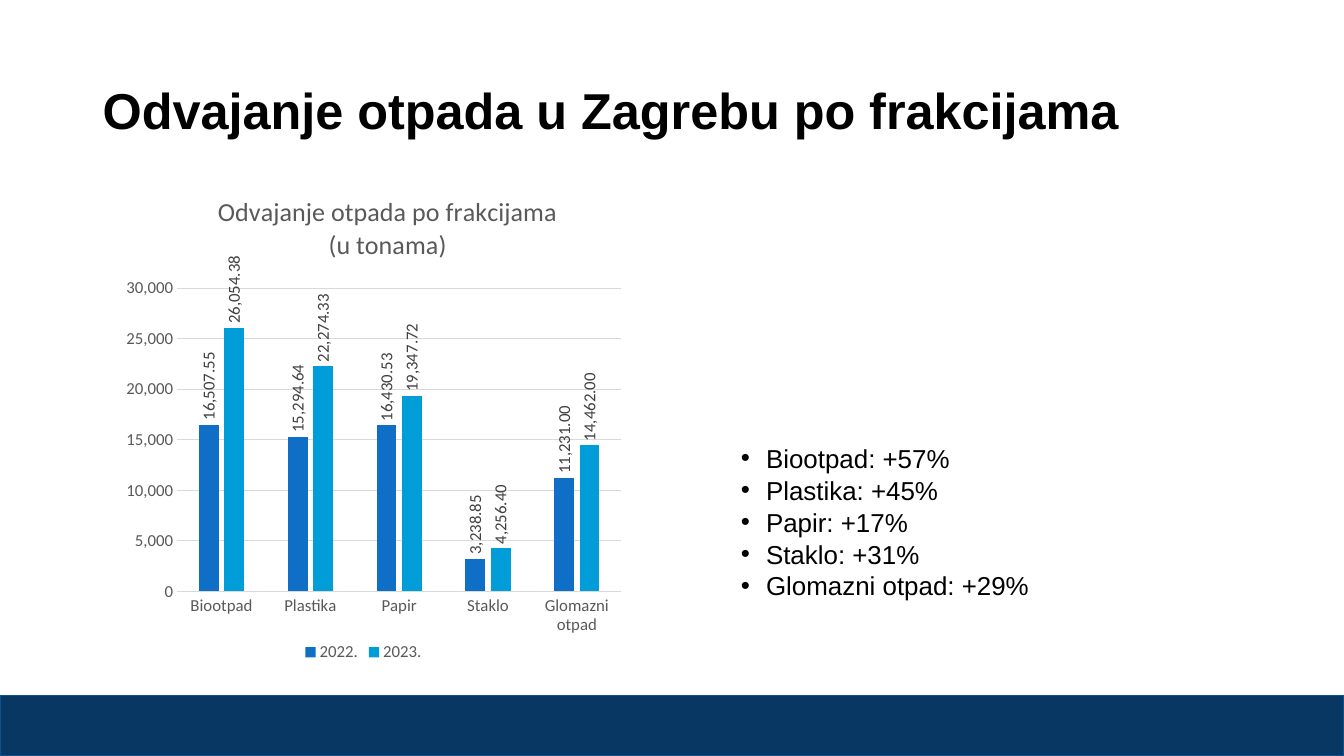
from lxml import etree
from pptx import Presentation
from pptx.chart.data import CategoryChartData
from pptx.dml.color import RGBColor
from pptx.enum.chart import XL_CHART_TYPE, XL_LABEL_POSITION, XL_LEGEND_POSITION, XL_TICK_MARK
from pptx.enum.shapes import MSO_SHAPE
from pptx.enum.text import MSO_ANCHOR
from pptx.oxml.ns import qn
from pptx.util import Pt

PX = 9144
COLUMN = XL_CHART_TYPE.COLUMN_CLUSTERED
OUTSIDE = XL_LABEL_POSITION.OUTSIDE_END
BOTTOM = XL_LEGEND_POSITION.BOTTOM
NO_TICK = XL_TICK_MARK.NONE
RECT = MSO_SHAPE.RECTANGLE
TOP, MIDDLE = MSO_ANCHOR.TOP, MSO_ANCHOR.MIDDLE

BLACK = RGBColor(0x00, 0x00, 0x00)
NAVY = RGBColor(0x08, 0x37, 0x63)
EDGE = RGBColor(0x0B, 0x52, 0x92)
GRAY = RGBColor(0x59, 0x59, 0x59)
DARK = RGBColor(0x40, 0x40, 0x40)
PALE = RGBColor(0xD9, 0xD9, 0xD9)
BLUE = RGBColor(0x0F, 0x6F, 0xC6)
CYAN = RGBColor(0x00, 0x9D, 0xD9)

TYPES = ["Biootpad", "Plastika", "Papir", "Staklo", "Glomazni otpad"]
GAINS = [57, 45, 17, 31, 29]
YEARS = [
    ("2022.", [16507.55, 15294.64, 16430.53, 3238.85, 11231], BLUE),
    ("2023.", [26054.38, 22274.33, 19347.72, 4256.4, 14462], CYAN),
]


def scale(*box):
    return [n * PX for n in box]


def style(font, name, size, color, bold=False):
    font.name = name
    font.size = Pt(size)
    font.bold = bold
    font.color.rgb = color


def add_bar(slide, box):
    bar = slide.shapes.add_shape(RECT, *scale(*box))
    bar.shadow.inherit = False
    bar.fill.solid()
    bar.fill.fore_color.rgb = NAVY
    bar.line.color.rgb = EDGE
    bar.line.width = Pt(1)


def add_text(slide, box, text, anchor, size, space, bold=False):
    frame = slide.shapes.add_textbox(*scale(*box)).text_frame
    frame.word_wrap = True
    frame.vertical_anchor = anchor
    frame.text = text
    for para in frame.paragraphs:
        para.line_spacing = space
        for run in para.runs:
            style(run.font, "Arial", size, BLACK, bold)
    return frame


def add_list(slide, box, items):
    frame = add_text(slide, box, "\n".join(items), TOP, 18.5, 0.8)
    for i, para in enumerate(frame.paragraphs):
        if i:
            para.space_before = Pt(5)
        props = para._p.get_or_add_pPr()
        props.set("marL", str(75 * PX))
        props.set("indent", str(-25 * PX))
        etree.SubElement(props, qn("a:buFont")).set("typeface", "Arial")
        etree.SubElement(props, qn("a:buChar")).set("char", "•")


def place(node, index, **parts):
    for old in node.findall(qn("c:layout")):
        node.remove(old)
    layout = etree.Element(qn("c:layout"))
    manual = etree.SubElement(layout, qn("c:manualLayout"))
    for tag, value in parts.items():
        etree.SubElement(manual, qn("c:" + tag)).set("val", str(value))
    node.insert(index, layout)


def style_axis(axis):
    axis.major_tick_mark = NO_TICK
    axis.minor_tick_mark = NO_TICK
    style(axis.tick_labels.font, "Calibri", 12, GRAY)


def style_line(line):
    line.color.rgb = PALE
    line.width = Pt(0.75)


def add_title(chart, text):
    chart.has_title = True
    title = chart.chart_title
    title.include_in_layout = False
    title.text_frame.text = text
    for para in title.text_frame.paragraphs:
        for run in para.runs:
            style(run.font, "Calibri", 18.6, GRAY)
    place(title._element, 1, xMode="edge", yMode="edge", x=0.24, y=0.01)


def add_labels(series):
    labels = series.data_labels
    labels.show_value = True
    labels.position = OUTSIDE
    labels.number_format = "#,##0.00"
    labels.number_format_is_linked = False
    style(labels.font, "Calibri", 12, DARK)
    body = labels._element.find(".//" + qn("a:bodyPr"))
    body.set("rot", "-5400000")
    body.set("vert", "horz")


def add_chart(slide, box):
    data = CategoryChartData(number_format="#,##0.00")
    data.categories = TYPES
    for name, values, color in YEARS:
        data.add_series(name, values)
    chart = slide.shapes.add_chart(COLUMN, *scale(*box), data).chart
    style(chart.font, "Calibri", 10, BLACK)
    add_title(chart, "Odvajanje otpada po frakcijama\n(u tonama)")

    plot = chart.plots[0]
    plot.vary_by_categories = False
    plot.gap_width = 219
    plot.overlap = -27
    for series, (name, values, color) in zip(plot.series, YEARS):
        series.format.fill.solid()
        series.format.fill.fore_color.rgb = color
        add_labels(series)
    area = chart._chartSpace.find(".//" + qn("c:plotArea"))
    place(area, 0, layoutTarget="inner", xMode="edge", yMode="edge",
          x=0.174, y=0.212, w=0.777, h=0.632)

    style_axis(chart.category_axis)
    style_line(chart.category_axis.format.line)
    axis = chart.value_axis
    style_axis(axis)
    axis.minimum_scale = 0
    axis.maximum_scale = 30000
    axis.major_unit = 5000
    axis.format.line.fill.background()
    axis.tick_labels.number_format = "#,##0"
    axis.tick_labels.number_format_is_linked = False
    style_line(axis.major_gridlines.format.line)

    chart.has_legend = True
    chart.legend.position = BOTTOM
    chart.legend.include_in_layout = False
    style(chart.legend.font, "Calibri", 12, GRAY)


def main():
    deck = Presentation()
    deck.slide_width, deck.slide_height = scale(1333, 750)
    slide = deck.slides.add_slide(deck.slide_layouts[6])
    add_bar(slide, (0, 690, 1333, 60))
    add_text(slide, (92, 40, 1150, 145),
             "Odvajanje otpada u Zagrebu po frakcijama", MIDDLE, 36, 0.9, True)
    add_list(slide, (675, 440, 567, 165),
             [f"{kind}: +{gain}%" for kind, gain in zip(TYPES, GAINS)])
    add_chart(slide, (77, 185, 567, 476))
    deck.save("out.pptx")


if __name__ == "__main__":
    main()
